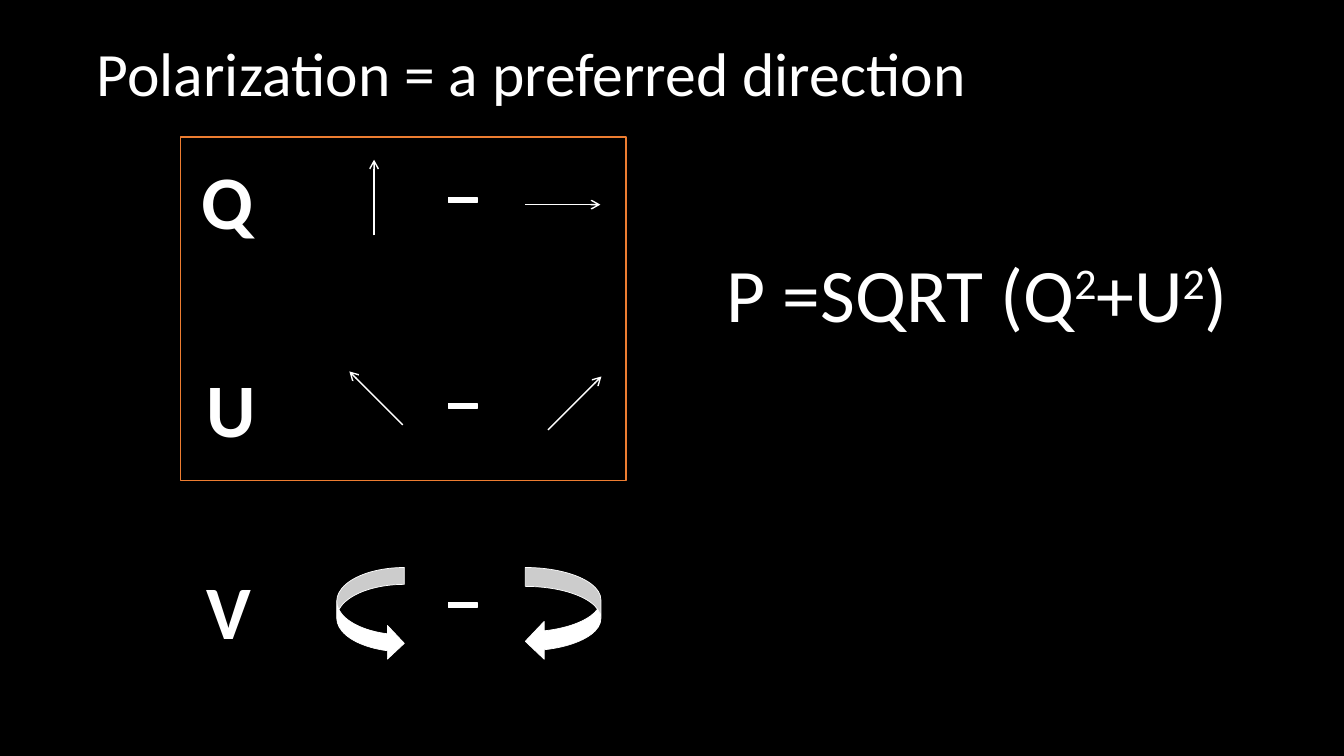
from lxml.etree import SubElement
from pptx import Presentation
from pptx.dml.color import RGBColor
from pptx.enum.shapes import MSO_CONNECTOR, MSO_SHAPE
from pptx.enum.text import MSO_ANCHOR, PP_ALIGN
from pptx.oxml.ns import qn
from pptx.util import Inches, Pt

COLORS = {"background": "000000", "ink": "FFFFFF", "frame": "ED7D31"}
rgb = {role: RGBColor.from_string(code) for role, code in COLORS.items()}


def write(frame, *parts, size=54, bold=False, wrap=True, anchor=MSO_ANCHOR.TOP, spacing=1.0):
    """Fill a text frame with one paragraph; a part led by ^ is superscript."""
    frame.word_wrap = wrap
    frame.vertical_anchor = anchor
    paragraph = frame.paragraphs[0]
    paragraph.alignment = PP_ALIGN.LEFT
    paragraph.line_spacing = spacing
    for part in parts:
        run = paragraph.add_run()
        run.text = part.lstrip("^")
        run.font.name = "Calibri"
        run.font.size = Pt(size)
        run.font.bold = bold
        run.font.color.rgb = rgb["ink"]
        if part.startswith("^"):
            run._r.get_or_add_rPr().set("baseline", "30000")


def add_figure(kind, box, fill="ink", line="ink", width=1):
    figure = slide.shapes.add_shape(kind, *map(Inches, box))
    figure.shadow.inherit = False
    if fill:
        figure.fill.solid()
        figure.fill.fore_color.rgb = rgb[fill]
    else:
        figure.fill.background()
    figure.line.color.rgb = rgb[line]
    figure.line.width = Pt(width)


deck = Presentation()
deck.slide_width, deck.slide_height = Inches(13.33), Inches(7.5)
slide = deck.slides.add_slide(deck.slide_layouts[5])
slide.background.fill.solid()
slide.background.fill.fore_color.rgb = rgb["background"]

title = slide.shapes.title
title.left, title.top, title.width, title.height = map(Inches, (0.86, 0.03, 11.5, 1.45))
write(title.text_frame, "Polarization = a preferred direction",
      size=44, anchor=MSO_ANCHOR.MIDDLE, spacing=0.9)

# Linear polarization: centre of each arrow and its reach to the tip
length = 0.75
diagonal = 0.53
directions = [
    (3.71, 1.96, 0, -length),
    (5.58, 2.03, length, 0),
    (3.73, 3.95, -diagonal, -diagonal),
    (5.7, 4.0, diagonal, -diagonal),
]
for x, y, dx, dy in directions:
    ends = (x - dx / 2, y - dy / 2, x + dx / 2, y + dy / 2)
    arrow = slide.shapes.add_connector(MSO_CONNECTOR.STRAIGHT, *map(Inches, ends))
    arrow.line.color.rgb = rgb["ink"]
    arrow.line.width = Pt(1)
    SubElement(arrow.line._get_or_add_ln(), qn("a:tailEnd"), type="arrow")
    SubElement(arrow._element.spPr, qn("a:effectLst"))

# Circular polarization
add_figure(MSO_SHAPE.CURVED_RIGHT_ARROW, (3.34, 5.63, 0.67, 0.92), width=0.5)
add_figure(MSO_SHAPE.CURVED_LEFT_ARROW, (5.21, 5.63, 0.75, 0.92), width=0.5)

# One row per Stokes parameter: letter, left and top of its label, top of the minus sign
for letter, left, top, minus_top in [("Q", 1.9, 1.48, 1.96),
                                     ("U", 1.95, 3.54, 4.0),
                                     ("V", 1.95, 5.54, 5.98)]:
    label = slide.shapes.add_textbox(*map(Inches, (left, top, 1, 1.01)))
    write(label.text_frame, letter, bold=True)
    add_figure(MSO_SHAPE.RECTANGLE, (4.45, minus_top, 0.28, 0.05))

formula = slide.shapes.add_textbox(*map(Inches, (7.11, 2.4, 5.29, 1.01)))
write(formula.text_frame, "P =SQRT (Q", "^2", "+U", "^2", ")", wrap=False)

add_figure(MSO_SHAPE.RECTANGLE, (1.79, 1.36, 4.42, 3.41), fill=None, line="frame")

deck.save("out.pptx")
